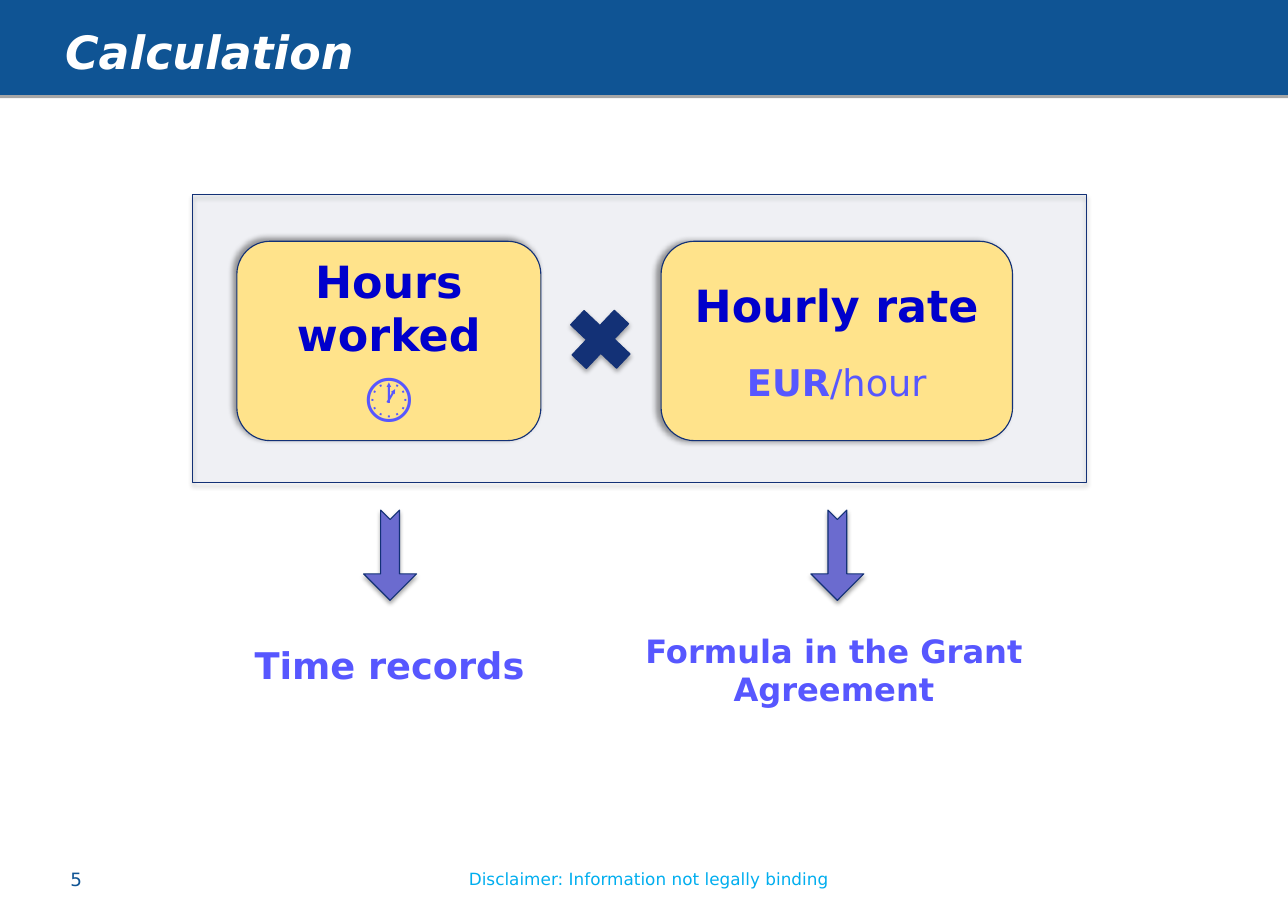
from lxml import etree
from pptx import Presentation
from pptx.dml.color import RGBColor
from pptx.enum.shapes import MSO_SHAPE
from pptx.enum.text import MSO_ANCHOR, MSO_AUTO_SIZE, PP_ALIGN
from pptx.oxml.ns import qn
from pptx.util import Pt

RECT, ROUNDED = MSO_SHAPE.RECTANGLE, MSO_SHAPE.ROUNDED_RECTANGLE
PLUS, NOTCHED_ARROW = MSO_SHAPE.MATH_PLUS, MSO_SHAPE.NOTCHED_RIGHT_ARROW
LEFT, CENTER = PP_ALIGN.LEFT, PP_ALIGN.CENTER
TOP, MIDDLE = MSO_ANCHOR.TOP, MSO_ANCHOR.MIDDLE
NO_FIT = MSO_AUTO_SIZE.NONE

FONT = "DejaVu Sans"
PAGE_WIDTH, PAGE_HEIGHT = 841.68, 595.44
BAR_BLUE, NAVY, YELLOW, VIOLET = "0F5494", "133176", "FFE38B", "6B6BCF"
HEADING_BLUE, LABEL_BLUE, CYAN, WHITE = "0000CC", "5757FF", "00AEEF", "FFFFFF"
SOFT_SHADOW = (35, 3.1, 1.8, 90)


def color(value):
    return RGBColor.from_string(value)


def set_shadow(shape, opacity, blur, distance, angle):
    """Give the shape a black outer shadow; blur and distance are in points."""
    shape.shadow.inherit = False
    effects = shape.element.spPr.find(qn("a:effectLst"))
    shadow = etree.SubElement(
        effects, qn("a:outerShdw"), blurRad=str(Pt(blur)), dist=str(Pt(distance)),
        dir=str(angle * 60000), algn="ctr", rotWithShape="0")
    black = etree.SubElement(shadow, qn("a:srgbClr"), val="000000")
    etree.SubElement(black, qn("a:alpha"), val=str(opacity * 1000))


def add_block(page, kind, box, fill, line=NAVY, weight=0.75, shadow=SOFT_SHADOW):
    shape = page.shapes.add_shape(kind, *map(Pt, box))
    shape.fill.solid()
    shape.fill.fore_color.rgb = color(fill)
    shape.line.color.rgb = color(line)
    shape.line.width = Pt(weight)
    set_shadow(shape, *shadow)
    return shape


def style(para, size, tint, bold=False, align=CENTER):
    para.alignment = align
    para.font.name = FONT
    para.font.size = Pt(size)
    para.font.bold = bold
    para.font.color.rgb = color(tint)


def add_label(page, box, text, size, tint, bold=False, align=CENTER):
    frame = page.shapes.add_textbox(*map(Pt, box)).text_frame
    frame.word_wrap = True
    para = frame.paragraphs[0]
    para.text = text
    style(para, size, tint, bold, align)


def add_header(page, height, text):
    add_block(page, RECT, (0, 0, PAGE_WIDTH, height), BAR_BLUE, BAR_BLUE, 5, (35, 0, 1.8, 90))
    title = page.shapes.title
    title.element.getparent().append(title.element)  # in front of the bar
    title.left, title.top, title.width, title.height = map(Pt, (34.5, 11.5, 757, 48))
    frame = title.text_frame
    frame.auto_size, frame.vertical_anchor = NO_FIT, TOP
    frame.margin_left = frame.margin_right = Pt(8)
    frame.margin_top = frame.margin_bottom = Pt(4)
    para = frame.paragraphs[0]
    para.text = text
    style(para, 30, WHITE, True, LEFT)
    para.font.italic = True


def add_factor(page, box, heading, shadow_angle):
    """Draw a yellow card and return an empty second paragraph for its unit."""
    card = add_block(page, ROUNDED, box, YELLOW, shadow=(40, 4, 3, shadow_angle))
    frame = card.text_frame
    frame.word_wrap, frame.vertical_anchor = True, MIDDLE
    frame.paragraphs[0].text = heading
    style(frame.paragraphs[0], 29, HEADING_BLUE, True)
    return frame.add_paragraph()


def add_formula(page, left, top, width, height):
    panel = add_block(page, RECT, (left, top, width, height), NAVY)
    tint = panel.element.spPr.find(qn("a:solidFill"))[0]
    etree.SubElement(tint, qn("a:alpha"), val="5000")

    card_top, card_height = top + 30.3, 130.3
    unit = add_factor(page, (left + 28.8, card_top, 198.7, card_height), "Hours worked", 225)
    unit.text = "🕐"
    style(unit, 37, LABEL_BLUE, True)

    times = add_block(page, PLUS, (left + 239, top + 66.3, 54.7, 56.2), NAVY)
    times.rotation = 313.4

    unit = add_factor(page, (left + 306, card_top, 229.7, card_height), "Hourly rate", 180)
    unit.space_before = Pt(18)
    style(unit, 24, LABEL_BLUE)
    for text, bold in (("EUR", True), ("/hour", False)):
        span = unit.add_run()
        span.text = text
        span.font.bold = bold


def add_down_arrow(page, center_x, center_y, length=59, thickness=34.6):
    box = (center_x - length / 2, center_y - thickness / 2, length, thickness)
    arrow = add_block(page, NOTCHED_ARROW, box, VIOLET)
    arrow.adjustments[0] = 0.355
    arrow.adjustments[1] = 0.5
    arrow.rotation = 90


def add_sources(page, top):
    """Point from each factor down to where its value comes from."""
    for arrow_x, box, text, size in (
            (254.9, (149.8, top + 71.3, 209.5, 36), "Time records", 24),
            (547.2, (397.4, top + 63.4, 295.2, 58.3), "Formula in the Grant Agreement", 21)):
        add_down_arrow(page, arrow_x, top + 17.3)
        add_label(page, box, text, size, LABEL_BLUE, True)


def add_footer(page, top):
    add_label(page, (38.9, top, 59, 21.6), "5", 12, BAR_BLUE, align=LEFT)
    add_label(page, (290.9, top + 0.7, 266.4, 20.9),
              "Disclaimer: Information not legally binding", 11, CYAN)


def main():
    deck = Presentation()
    deck.slide_width, deck.slide_height = Pt(PAGE_WIDTH), Pt(PAGE_HEIGHT)
    page = deck.slides.add_slide(deck.slide_layouts.get_by_name("Title Only"))
    add_header(page, 59.8, "Calculation")
    add_formula(page, 126, 127.4, 583.9, 187.9)
    add_sources(page, 345.6)
    add_footer(page, 563.8)
    deck.save("out.pptx")


if __name__ == "__main__":
    main()
